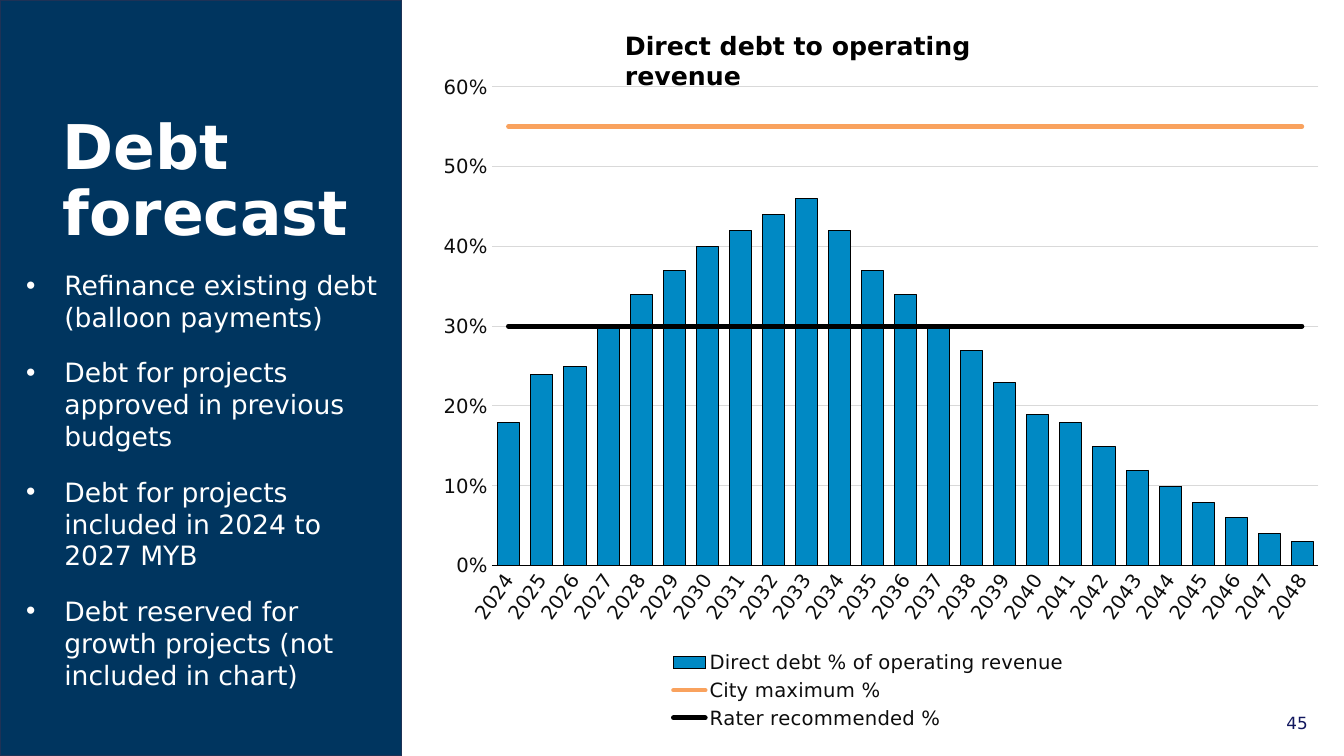
from dataclasses import dataclass

from lxml import etree
from pptx import Presentation
from pptx.chart.data import CategoryChartData
from pptx.dml.color import RGBColor
from pptx.enum.chart import XL_CHART_TYPE, XL_LEGEND_POSITION, XL_MARKER_STYLE, XL_TICK_MARK
from pptx.enum.shapes import MSO_SHAPE
from pptx.enum.text import MSO_ANCHOR, MSO_AUTO_SIZE, PP_ALIGN
from pptx.oxml import parse_xml
from pptx.oxml.ns import nsdecls, qn
from pptx.util import Inches, Pt

COLUMN_CLUSTERED = XL_CHART_TYPE.COLUMN_CLUSTERED
LEGEND_BOTTOM = XL_LEGEND_POSITION.BOTTOM
NO_MARKER = XL_MARKER_STYLE.NONE
NO_TICK = XL_TICK_MARK.NONE
RECTANGLE = MSO_SHAPE.RECTANGLE
MIDDLE, TOP = MSO_ANCHOR.MIDDLE, MSO_ANCHOR.TOP
NO_AUTOFIT = MSO_AUTO_SIZE.NONE
LEFT, RIGHT = PP_ALIGN.LEFT, PP_ALIGN.RIGHT

FONT = "DejaVu Sans"
COLORS = {
    "panel": "00355F", "panel_line": "1E3256", "white": "FFFFFF", "black": "000000",
    "number": "11175E", "chart_text": "0D0D0D", "grid": "D9D9D9",
    "debt": "0089C4", "maximum": "F9A25E",
}

# The slide is a grid of square cells, 75 rows high
SLIDE_WIDTH, SLIDE_HEIGHT = Inches(13.33), Inches(7.5)
CELL = SLIDE_HEIGHT / 75


@dataclass(frozen=True)
class Box:
    """A place on the slide, in grid columns and rows."""
    column: float
    row: float
    columns: float
    rows: float

    def lengths(self) -> tuple[int, ...]:
        return tuple(round(n * CELL) for n in (self.column, self.row, self.columns, self.rows))


@dataclass(frozen=True)
class Layout:
    """A place in the chart, as shares of its size."""
    x: float
    y: float
    w: float
    h: float


@dataclass(frozen=True)
class Limit:
    name: str
    value: float
    color: str
    width: float


PANEL = Box(0, 0, 39.8, 75)
TITLE = Box(5.2, 6.7, 32.8, 22.8)
BULLETS = Box(1.6, 26.2, 38.1, 43.3)
CHART = Box(41.5, 6.6, 91.1, 66.9)
CHART_TITLE = Box(61, 2.5, 47, 4)
NUMBER = Box(123.3, 70.2, 7.4, 4)
PLOT_LAYOUT = Layout(0.08, 0.03, 0.9, 0.71)
LEGEND_LAYOUT = Layout(0.27, 0.86, 0.44, 0.13)

POINTS = [
    "Refinance existing debt (balloon payments)",
    "Debt for projects approved in previous budgets",
    "Debt for projects included in 2024 to 2027 MYB",
    "Debt reserved for growth projects (not included in chart)",
]
FIRST_YEAR = 2024
DEBT = [0.18, 0.24, 0.25, 0.3, 0.34, 0.37, 0.4, 0.42, 0.44, 0.46, 0.42, 0.37, 0.34,
        0.3, 0.27, 0.23, 0.19, 0.18, 0.15, 0.12, 0.1, 0.08, 0.06, 0.04, 0.03]
LIMITS = [
    Limit("City maximum %", 0.55, "maximum", 3.25),
    Limit("Rater recommended %", 0.3, "black", 3.5),
]


def rgb(name: str) -> RGBColor:
    return RGBColor.from_string(COLORS[name])


def set_font(font, size: float, color: str, bold: bool = False, name: str = FONT) -> None:
    font.name, font.size, font.bold = name, Pt(size), bold
    font.color.rgb = rgb(color)


def set_line(line, color: str, width: float) -> None:
    line.color.rgb = rgb(color)
    line.width = Pt(width)


def add_text(slide, box: Box, lines: list[str], size: float, color: str,
             bold: bool = False, align=LEFT, bulleted: bool = False) -> None:
    frame = slide.shapes.add_textbox(*box.lengths()).text_frame
    frame.word_wrap = True
    frame.vertical_anchor = TOP
    frame.text = "\n".join(lines)
    for index, paragraph in enumerate(frame.paragraphs):
        paragraph.alignment = align
        if bulleted:
            paragraph.space_before = Pt(4.8 if index else 0)
            paragraph.space_after = Pt(12)
            properties = paragraph._p.get_or_add_pPr()
            properties.set("marL", str(Inches(0.38)))
            properties.set("indent", str(-Inches(0.38)))
            etree.SubElement(properties, qn("a:buFont"), typeface="Arial")
            etree.SubElement(properties, qn("a:buChar"), char="•")
        set_font(paragraph.font, size, color, bold)


def layout_xml(layout: Layout, inner: bool = False):
    target = '<c:layoutTarget val="inner"/>' if inner else ""
    return parse_xml(
        f'<c:layout {nsdecls("c")}><c:manualLayout>{target}'
        '<c:xMode val="edge"/><c:yMode val="edge"/>'
        f'<c:x val="{layout.x}"/><c:y val="{layout.y}"/>'
        f'<c:w val="{layout.w}"/><c:h val="{layout.h}"/></c:manualLayout></c:layout>')


def replace_layout(parent, layout, position: int) -> None:
    for old in parent.findall(qn("c:layout")):
        parent.remove(old)
    parent.insert(position, layout)


def move_limits_to_lines(chart) -> None:
    """Turn every series after the first into a line on the same axes."""
    bars = chart.plots[0]._element
    lines = parse_xml(f'<c:lineChart {nsdecls("c")}><c:grouping val="standard"/>'
                      '<c:varyColors val="0"/></c:lineChart>')
    for series in bars.findall(qn("c:ser"))[1:]:
        for flag in series.findall(qn("c:invertIfNegative")):
            series.remove(flag)
        lines.append(series)
    etree.SubElement(lines, qn("c:marker"), val="1")
    for axis in bars.findall(qn("c:axId")):
        etree.SubElement(lines, qn("c:axId"), val=axis.get("val"))
    bars.addnext(lines)


def add_debt_chart(slide) -> None:
    data = CategoryChartData(number_format="0%")
    data.categories = [str(FIRST_YEAR + index) for index in range(len(DEBT))]
    data.add_series("Direct debt % of operating revenue", DEBT)
    for limit in LIMITS:
        data.add_series(limit.name, [limit.value] * len(DEBT))
    chart = slide.shapes.add_chart(COLUMN_CLUSTERED, *CHART.lengths(), data).chart
    chart.has_title = False
    set_font(chart.font, 10, "chart_text", name="Calibri")
    move_limits_to_lines(chart)

    # Bars and limit lines
    bars, lines = chart.plots
    bars.vary_by_categories = False
    bars.gap_width = 50
    debt = bars.series[0].format
    debt.fill.solid()
    debt.fill.fore_color.rgb = rgb("debt")
    set_line(debt.line, "black", 0.05)
    for series, limit in zip(lines.series, LIMITS):
        set_line(series.format.line, limit.color, limit.width)
        series.format.line._get_or_add_ln().set("cap", "rnd")
        series.marker.style = NO_MARKER
        series.smooth = False

    # Axes
    years, shares = chart.category_axis, chart.value_axis
    for axis in (years, shares):
        axis.major_tick_mark = axis.minor_tick_mark = NO_TICK
        set_font(axis.tick_labels.font, 14, "chart_text")
    set_line(years.format.line, "black", 0.75)
    rotation = years._element.find(qn("c:txPr")).find(qn("a:bodyPr"))
    rotation.set("rot", str(-55 * 60000))
    rotation.set("vert", "horz")
    shares.minimum_scale, shares.maximum_scale, shares.major_unit = 0, 0.6, 0.1
    shares.tick_labels.number_format = "0%"
    shares.tick_labels.number_format_is_linked = False
    shares.format.line.fill.background()
    set_line(shares.major_gridlines.format.line, "grid", 0.75)

    # Legend and plot area
    chart.has_legend = True
    chart.legend.position = LEGEND_BOTTOM
    chart.legend.include_in_layout = False
    set_font(chart.legend.font, 14, "chart_text")
    replace_layout(chart.legend._element, layout_xml(LEGEND_LAYOUT), 1)
    replace_layout(bars._element.getparent(), layout_xml(PLOT_LAYOUT, inner=True), 0)


def main() -> None:
    presentation = Presentation()
    presentation.slide_width, presentation.slide_height = SLIDE_WIDTH, SLIDE_HEIGHT
    slide = presentation.slides.add_slide(presentation.slide_layouts[5])

    # Side panel, behind the title
    panel = slide.shapes.add_shape(RECTANGLE, *PANEL.lengths())
    panel.shadow.inherit = False
    panel.fill.solid()
    panel.fill.fore_color.rgb = rgb("panel")
    set_line(panel.line, "panel_line", 1)
    title = slide.shapes.title
    title.element.addprevious(panel.element)

    # Title and points
    title.left, title.top, title.width, title.height = TITLE.lengths()
    frame = title.text_frame
    frame.text = "Debt forecast"
    frame.word_wrap, frame.auto_size, frame.vertical_anchor = True, NO_AUTOFIT, MIDDLE
    paragraph = frame.paragraphs[0]
    paragraph.alignment, paragraph.line_spacing = LEFT, 0.9
    set_font(paragraph.font, 44, "white", bold=True)
    add_text(slide, BULLETS, POINTS, 19, "white", bulleted=True)

    # Chart, its heading and the slide number
    add_debt_chart(slide)
    add_text(slide, CHART_TITLE, ["Direct debt to operating revenue"], 18, "black", bold=True)
    add_text(slide, NUMBER, ["45"], 12, "number", align=RIGHT)
    presentation.save("out.pptx")


if __name__ == "__main__":
    main()
